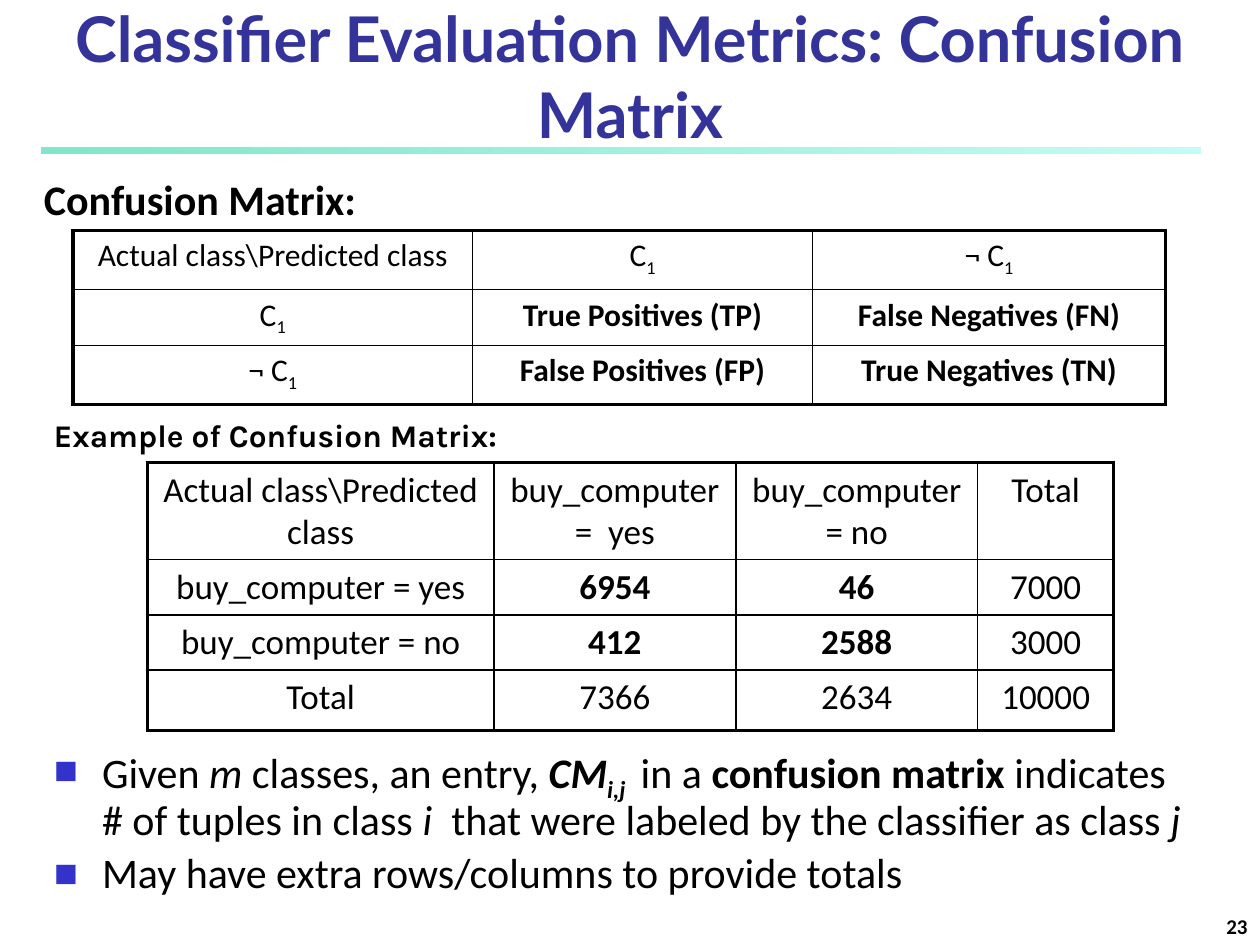
"""Build the confusion matrix slide."""
from dataclasses import dataclass

import pptx
import pptx.dml.color
import pptx.enum.shapes
import pptx.enum.text
import pptx.oxml
import pptx.oxml.ns
import pptx.util

Inches, Pt = pptx.util.Inches, pptx.util.Pt
PP_ALIGN = pptx.enum.text.PP_ALIGN
ANCHOR = pptx.enum.text.MSO_ANCHOR
AUTO_SIZE = pptx.enum.text.MSO_AUTO_SIZE
NS = pptx.oxml.ns.nsdecls("a")


@dataclass(frozen=True)
class Theme:
    ink: str = "000000"
    title: str = "333399"
    bullet: str = "3333CC"
    rule: tuple = (("00CE98", 50), ("8FF9EF", 52))
    font: str = "Calibri"
    title_font: str = "Lato"
    caption_font: str = "Karla"
    title_size: int = 36
    body_size: int = 24
    example_size: int = 20
    small_size: int = 18
    number_size: int = 12
    outer: float = 2.25
    inner: float = 1


THEME = Theme()
BOLD = {"bold": True}
ITALIC = {"italic": True}
SUB = {"sub": True}
C1 = ["C", ("1", SUB)]
NOT_C1 = ["¬ C", ("1", SUB)]


def rgb(value):
    return pptx.dml.color.RGBColor.from_string(value)


def add_run(p, text, size, font=THEME.font, color=THEME.ink, bold=False, italic=False, sub=False):
    r = p.add_run()
    r.text = text
    r.font.size, r.font.name = Pt(size), font
    r.font.bold, r.font.italic = bold, italic
    r.font.color.rgb = rgb(color)
    if sub:
        r.font._element.set("baseline", "-25000")


def write(p, content, align=PP_ALIGN.LEFT, before=0, **fmt):
    """Fill a paragraph from a string or a list of strings and (text, format) pairs."""
    p.alignment = align
    p.space_before = Pt(before)
    for part in [content] if isinstance(content, str) else content:
        text, extra = (part, {}) if isinstance(part, str) else part
        add_run(p, text, **{**fmt, **extra})


def place(sp, left, top, width, height):
    sp.left, sp.top = Inches(left), Inches(top)
    sp.width, sp.height = Inches(width), Inches(height)


def add_text(s, box, text, wrap=True, anchor=ANCHOR.TOP, **fmt):
    tf = s.shapes.add_textbox(*map(Inches, box)).text_frame
    tf.word_wrap, tf.vertical_anchor = wrap, anchor
    write(tf.paragraphs[0], text, **fmt)


def add_rule(s, box):
    sp = s.shapes.add_shape(pptx.enum.shapes.MSO_SHAPE.RECTANGLE, *map(Inches, box))
    sp.shadow.inherit = False
    sp.line.fill.background()
    sp.fill.gradient()
    sp.fill.gradient_angle = 0
    for stop, (color, alpha) in zip(sp.fill.gradient_stops, THEME.rule):
        stop.color.rgb = rgb(color)
    colors = sp._element.spPr.findall(".//" + pptx.oxml.ns.qn("a:srgbClr"))
    for node, (color, alpha) in zip(colors, THEME.rule):
        node.append(pptx.oxml.parse_xml(f'<a:alpha {NS} val="{alpha * 1000}"/>'))


def set_borders(cell, outer_sides):
    tcPr = cell._tc.get_or_add_tcPr()
    for side, is_outer in outer_sides.items():
        width = Pt(THEME.outer if is_outer else THEME.inner)
        tcPr.append(pptx.oxml.parse_xml(
            f'<a:ln{side} {NS} w="{width}"><a:solidFill><a:srgbClr val="{THEME.ink}"/>'
            f'</a:solidFill></a:ln{side}>'))


def add_matrix(s, left, top, widths, heights, rows, size, bold_cells):
    box = map(Inches, (left, top, sum(widths), sum(heights)))
    table = s.shapes.add_table(len(rows), len(widths), *box).table
    table.first_row = table.horz_banding = False
    for column, width in zip(table.columns, widths):
        column.width = Inches(width)
    for row, height in zip(table.rows, heights):
        row.height = Inches(height)
    for i, row in enumerate(rows):
        for j, content in enumerate(row):
            cell = table.cell(i, j)
            set_borders(cell, {"L": j == 0, "R": j == len(widths) - 1,
                               "T": i == 0, "B": i == len(rows) - 1})
            cell.fill.background()
            write(cell.text_frame.paragraphs[0], content, align=PP_ALIGN.CENTER,
                  before=size * 0.2, size=size, bold=(i, j) in bold_cells)


def set_title(s, text):
    sp = s.shapes.title
    place(sp, 0, 0, 10, 1.25)
    tf = sp.text_frame
    tf.auto_size, tf.vertical_anchor = AUTO_SIZE.NONE, ANCHOR.BOTTOM
    write(tf.paragraphs[0], text, align=PP_ALIGN.CENTER, size=THEME.title_size,
          font=THEME.title_font, color=THEME.title, bold=True)


def set_bullet(p):
    pPr = p._p.get_or_add_pPr()
    pPr.set("marL", str(Inches(0.38)))
    pPr.set("indent", str(-Inches(0.38)))
    for xml in (f'<a:buClr {NS}><a:srgbClr val="{THEME.bullet}"/></a:buClr>',
                f'<a:buSzPct {NS} val="60000"/>',
                f'<a:buFont {NS} typeface="{THEME.font}"/>',
                f'<a:buChar {NS} char="■"/>'):
        pPr.append(pptx.oxml.parse_xml(xml))


def set_body(s, items):
    sp = s.placeholders[1]
    place(sp, 0.33, 5.88, 9.25, 1.38)
    tf = sp.text_frame
    tf.auto_size = AUTO_SIZE.NONE
    for i, item in enumerate(items):
        p = tf.add_paragraph() if i else tf.paragraphs[0]
        p.line_spacing = 0.9
        write(p, item, before=THEME.body_size * 0.2, size=THEME.body_size)
        set_bullet(p)


def main():
    prs = pptx.Presentation()
    prs.slide_width, prs.slide_height = Inches(10), Inches(7.5)
    s = prs.slides.add_slide(prs.slide_layouts[1])
    add_rule(s, (0.33, 1.17, 9.2, 0.05))
    set_title(s, "Classifier Evaluation Metrics: Confusion Matrix")
    add_text(s, (0.25, 1.33, 2.85, 0.5), "Confusion Matrix:", size=THEME.body_size, bold=True)
    add_matrix(s, 0.58, 1.83, (3.17, 2.7, 2.8), (0.47, 0.42, 0.47), [
        ["Actual class\\Predicted class", C1, NOT_C1],
        [C1, "True Positives (TP)", "False Negatives (FN)"],
        [NOT_C1, "False Positives (FP)", "True Negatives (TN)"],
    ], THEME.small_size, {(1, 1), (1, 2), (2, 1), (2, 2)})
    add_text(s, (0.33, 3.25, 3.9, 0.4), "Example of Confusion Matrix:", wrap=False,
             size=THEME.small_size, font=THEME.caption_font, bold=True)
    add_matrix(s, 1.17, 3.67, (2.75, 1.92, 1.92, 1.08), (0.77, 0.44, 0.44, 0.48), [
        ["Actual class\\Predicted class", "buy_computer =  yes", "buy_computer = no", "Total"],
        ["buy_computer = yes", "6954", "46", "7000"],
        ["buy_computer = no", "412", "2588", "3000"],
        ["Total", "7366", "2634", "10000"],
    ], THEME.example_size, {(1, 1), (1, 2), (2, 1), (2, 2)})
    set_body(s, [
        ["Given", (" m", ITALIC), " classes, an entry, ", ("CM", BOLD | ITALIC),
         ("i,j ", BOLD | ITALIC | SUB), " in a ", ("confusion matrix", BOLD),
         " indicates # of tuples in class ", ("i", ITALIC),
         "  that were labeled by the classifier as class ", ("j", ITALIC)],
        "May have extra rows/columns to provide totals",
    ])
    add_text(s, (7.92, 7.08, 2.08, 0.42), "23", anchor=ANCHOR.BOTTOM, align=PP_ALIGN.RIGHT,
             size=THEME.number_size, bold=True)
    prs.save("out.pptx")


if __name__ == "__main__":
    main()
